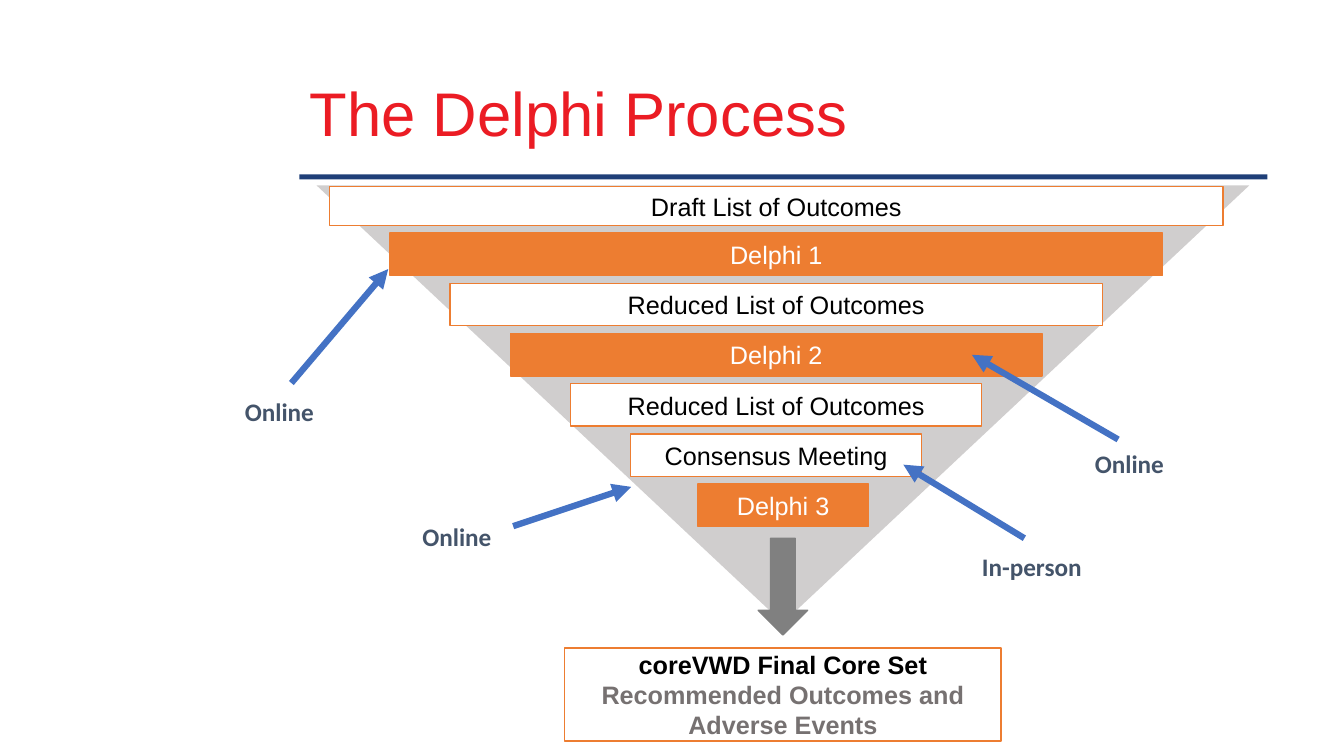
from dataclasses import dataclass

from lxml.etree import SubElement
from pptx import Presentation
from pptx.dml.color import RGBColor
from pptx.enum.shapes import MSO_CONNECTOR, MSO_SHAPE
from pptx.enum.text import MSO_ANCHOR, MSO_AUTO_SIZE, PP_ALIGN
from pptx.oxml.ns import qn
from pptx.util import Inches, Pt

COLORS = {
    "title": "EB1C24", "rule": "1F3F78", "funnel": "D0CECE",
    "orange": "ED7D31", "white": "FFFFFF", "black": "000000",
    "muted": "767171", "gray": "808080", "label": "44546A", "pointer": "4472C4",
}

# The grid has ten columns and ten rows to the inch
CELL = Inches(0.1)


@dataclass(frozen=True)
class Box:
    column: float
    row: float
    columns: float
    rows: float

    def lengths(self) -> tuple[int, ...]:
        return tuple(grid(n) for n in (self.column, self.row, self.columns, self.rows))


@dataclass(frozen=True)
class Stage:
    name: str
    is_survey: bool = False


@dataclass(frozen=True)
class Callout:
    text: str
    column: float
    row: float
    start: tuple[float, float]
    end: tuple[float, float]


STAGES = (
    Stage("Draft List of Outcomes"),
    Stage("Delphi 1", True),
    Stage("Reduced List of Outcomes"),
    Stage("Delphi 2", True),
    Stage("Reduced List of Outcomes"),
    Stage("Consensus Meeting"),
    Stage("Delphi 3", True),
)

CALLOUTS = (
    Callout("Online", 23.3, 38.8, (28.9, 38), (38.5, 26.7)),
    Callout("Online", 107.6, 44, (110.9, 43.6), (96.4, 35.2)),
    Callout("Online", 40.9, 51.2, (50.9, 52.2), (62.6, 48.3)),
    Callout("In-person", 96.4, 54.2, (101.6, 53.4), (89.6, 46.1)),
)


def grid(cells: float) -> int:
    return round(cells * CELL)


def color(name: str) -> RGBColor:
    return RGBColor.from_string(COLORS[name])


def write(paragraph, text: str, *, ink: str, size: float = 18, font: str = "Arial",
          bold: bool = False, align=PP_ALIGN.CENTER) -> None:
    paragraph.alignment = align
    run = paragraph.add_run()
    run.text = text
    run.font.name = font
    run.font.size = Pt(size)
    run.font.bold = bold
    run.font.color.rgb = color(ink)


def add_block(slide, kind, box: Box, fill: str, outline: str | None = None):
    block = slide.shapes.add_shape(kind, *box.lengths())
    block.shadow.inherit = False
    block.fill.solid()
    block.fill.fore_color.rgb = color(fill)
    if outline:
        block.line.color.rgb = color(outline)
        block.line.width = Pt(1)
    else:
        block.line.fill.background()
    block.text_frame.word_wrap = True
    block.text_frame.vertical_anchor = MSO_ANCHOR.MIDDLE
    return block


def add_stage(slide, index: int, stage: Stage) -> None:
    first, last = index == 0, index == len(STAGES) - 1
    box = Box(
        32.7 + 5.97 * index + (0.7 if last else 0),
        18.5 if first else 18.15 + 4.98 * index,
        88.6 - 11.95 * index,
        3.9 if first else 4.2,
    )
    fill, ink = ("orange", "white") if stage.is_survey else ("white", "black")
    bar = add_block(slide, MSO_SHAPE.RECTANGLE, box, fill, "orange")
    write(bar.text_frame.paragraphs[0], stage.name, ink=ink)


def add_callout(slide, callout: Callout) -> None:
    label = slide.shapes.add_textbox(
        *Box(callout.column, callout.row, 18.8, 4).lengths())
    label.text_frame.word_wrap = True
    label.text_frame.auto_size = MSO_AUTO_SIZE.SHAPE_TO_FIT_TEXT
    write(label.text_frame.paragraphs[0], callout.text, ink="label",
          font="Calibri", bold=True, align=PP_ALIGN.LEFT)

    ends = (grid(n) for n in (*callout.start, *callout.end))
    pointer = slide.shapes.add_connector(MSO_CONNECTOR.STRAIGHT, *ends)
    pointer.line.color.rgb = color("pointer")
    pointer.line.width = Pt(4.5)
    SubElement(pointer.line._get_or_add_ln(), qn("a:tailEnd"), type="triangle")
    SubElement(pointer._element.spPr, qn("a:effectLst"))


def main() -> None:
    deck = Presentation()
    deck.slide_width, deck.slide_height = Inches(13.33), Inches(7.5)
    slide = deck.slides.add_slide(deck.slide_layouts[5])

    # Title and the rule below it
    add_block(slide, MSO_SHAPE.RECTANGLE, Box(29.7, 17.3, 96, 0.5), "rule")
    title = slide.shapes.title
    title.left, title.top, title.width, title.height = Box(29.7, 5.9, 96, 11.4).lengths()
    title.text_frame.word_wrap = True
    title.text_frame.auto_size = MSO_AUTO_SIZE.NONE
    title.text_frame.vertical_anchor = MSO_ANCHOR.MIDDLE
    heading = title.text_frame.paragraphs[0]
    heading.line_spacing = 0.9
    write(heading, "The Delphi Process", ink="title", size=44, align=PP_ALIGN.LEFT)

    # Final core set
    core_set = add_block(slide, MSO_SHAPE.RECTANGLE, Box(56, 64.3, 43.3, 9.2),
                         "white", "orange").text_frame
    write(core_set.paragraphs[0], "coreVWD Final Core Set", ink="black", bold=True)
    write(core_set.add_paragraph(), "Recommended Outcomes and Adverse Events",
          ink="muted", bold=True)

    # Funnel with its stages
    funnel = add_block(slide, MSO_SHAPE.ISOSCELES_TRIANGLE,
                       Box(31.4, 18.4, 92.5, 43.4), "funnel")
    funnel.rotation = 180
    for index, stage in enumerate(STAGES):
        add_stage(slide, index, stage)
    add_block(slide, MSO_SHAPE.DOWN_ARROW, Box(75.2, 53.4, 4.9, 9.6), "gray", "gray")

    # How each round is held
    for callout in CALLOUTS:
        add_callout(slide, callout)

    deck.save("out.pptx")


if __name__ == "__main__":
    main()
